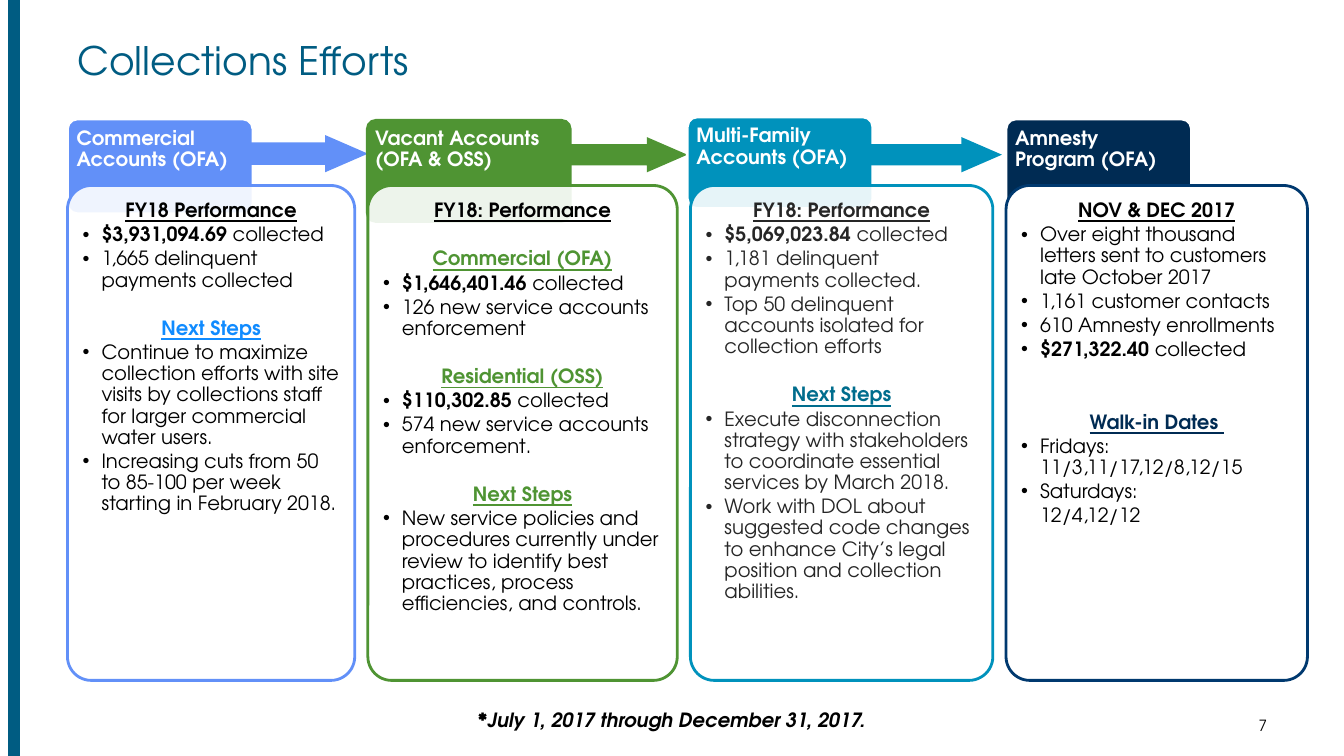
"""Build the Collections Efforts slide."""
from dataclasses import dataclass

from lxml import etree
from pptx import Presentation
from pptx.dml.color import RGBColor
from pptx.enum.shapes import MSO_CONNECTOR, MSO_SHAPE
from pptx.enum.text import MSO_ANCHOR, PP_ALIGN
from pptx.oxml.ns import qn
from pptx.util import Pt

LEFT, CENTER, RIGHT = PP_ALIGN.LEFT, PP_ALIGN.CENTER, PP_ALIGN.RIGHT
TOP, MIDDLE = MSO_ANCHOR.TOP, MSO_ANCHOR.MIDDLE
ROUNDED, ARROW = MSO_SHAPE.ROUNDED_RECTANGLE, MSO_SHAPE.RIGHT_ARROW
STRAIGHT = MSO_CONNECTOR.STRAIGHT
FONT, TEAL, BLACK, WHITE = "TeX Gyre Adventor", "005C82", "000000", "FFFFFF"
CARD_TOP, CARD_HEIGHT = 132.5, 353.5
LINE_GAP = 17.3
HANG = 13.5


def rgb(value):
    return RGBColor.from_string(value)


@dataclass
class Entry:
    text: str
    lead: str = ""
    color: str = BLACK
    heading: bool = False
    bullet: bool = True
    gap: float = 0


def heading(text, color=BLACK, lines=1):
    return Entry(text, color=color, heading=True, bullet=False, gap=lines * LINE_GAP)


class SlideBuilder:
    def __init__(self, slide):
        self.slide = slide

    def style(self, paragraph, size, color=BLACK, bold=False, italic=False, underline=False):
        font = paragraph.font
        font.name, font.size, font.color.rgb = FONT, Pt(size), rgb(color)
        font.bold, font.italic, font.underline = bold, italic, underline

    def shape(self, kind, box, fill, line=None, opacity=100):
        shape = self.slide.shapes.add_shape(kind, *map(Pt, box))
        shape.shadow.inherit = False
        shape.fill.solid()
        shape.fill.fore_color.rgb = rgb(fill)
        if opacity < 100:
            color = shape.fill._xPr.find(".//" + qn("a:srgbClr"))
            etree.SubElement(color, qn("a:alpha")).set("val", str(opacity * 1000))
        if line:
            shape.line.color.rgb = rgb(line)
            shape.line.width = Pt(2)
        else:
            shape.line.fill.background()
        return shape

    def rounded(self, box, radius, inset, fill, line=None, opacity=100):
        shape = self.shape(ROUNDED, box, fill, line, opacity)
        shape.adjustments[0] = radius / min(box[2:])
        frame = shape.text_frame
        frame.word_wrap, frame.vertical_anchor = True, TOP
        margin = Pt(inset - radius * 0.29)
        frame.margin_left = frame.margin_right = frame.margin_top = frame.margin_bottom = margin
        return frame

    def tab(self, box, label, fill, line):
        paragraph = self.rounded(box, 7, 6.5, fill, line).paragraphs[0]
        paragraph.text, paragraph.alignment = label, LEFT
        paragraph.line_spacing = 0.9
        self.style(paragraph, 14, WHITE, bold=True)

    def card(self, left, width, line, opacity, entries):
        box = (left, CARD_TOP, width, CARD_HEIGHT)
        frame = self.rounded(box, 17, 10.8, WHITE, line, opacity)
        for index, entry in enumerate(entries):
            paragraph = frame.add_paragraph() if index else frame.paragraphs[0]
            self.entry(paragraph, entry)

    def entry(self, paragraph, entry):
        paragraph.alignment = CENTER if entry.heading else LEFT
        paragraph.line_spacing = 0.9
        paragraph.space_before, paragraph.space_after = Pt(entry.gap), Pt(2.1)
        properties = paragraph._p.get_or_add_pPr()
        if not entry.heading:
            properties.set("marL", str(Pt(HANG)))
            properties.set("indent", str(Pt(-HANG) if entry.bullet else 0))
        if entry.bullet:
            etree.SubElement(properties, qn("a:buFont")).set("typeface", "Arial")
            etree.SubElement(properties, qn("a:buChar")).set("char", "•")
        if entry.lead:
            amount = paragraph.add_run()
            amount.text = entry.lead
            amount.font.bold = True
        paragraph.add_run().text = entry.text
        self.style(paragraph, 14, entry.color, bold=entry.heading, underline=entry.heading)

    def arrow(self, box, fill):
        arrow = self.shape(ARROW, box, fill)
        arrow.adjustments[0], arrow.adjustments[1] = 0.6, 1.15

    def title(self, box, text):
        title = self.slide.shapes.title
        title.left, title.top, title.width, title.height = map(Pt, box)
        title.text_frame.vertical_anchor = MIDDLE
        paragraph = title.text_frame.paragraphs[0]
        paragraph.text, paragraph.alignment = text, LEFT
        self.style(paragraph, 28, TEAL)

    def text(self, box, text, size, alignment, anchor=TOP, **emphasis):
        frame = self.slide.shapes.add_textbox(*map(Pt, box)).text_frame
        frame.word_wrap, frame.vertical_anchor = True, anchor
        if anchor == MIDDLE:
            frame.margin_top = frame.margin_bottom = 0
        paragraph = frame.paragraphs[0]
        paragraph.text, paragraph.alignment = text, alignment
        self.style(paragraph, size, **emphasis)

    def side_bar(self, x, height, width):
        bar = self.slide.shapes.add_connector(STRAIGHT, Pt(x), 0, Pt(x), Pt(height))
        bar.line.color.rgb, bar.line.width = rgb(TEAL), Pt(width)
        etree.SubElement(bar._element.spPr, qn("a:effectLst"))


GRAY = "262626"
PROGRAMS = [
    dict(
        label="Commercial Accounts (OFA)", fill="6290F8", outline="6290F8", edge=WHITE,
        tab=(48.2, 85, 132.5, 67.7), card=(48.2, 205.2), opacity=90,
        arrow=(175.7, 96.5, 87.1, 26.6),
        entries=[
            heading("FY18 Performance", lines=0),
            Entry("collected", "$3,931,094.69 "),
            Entry("1,665 delinquent payments collected"),
            heading("Next Steps", "108BFF"),
            Entry("Continue to maximize collection efforts with site visits by "
                  "collections staff for larger commercial water users."),
            Entry("Increasing cuts from 50 to 85-100 per week starting in February 2018."),
        ]),
    dict(
        label="Vacant Accounts (OFA & OSS)", fill="4F9433", outline="4F9433", edge=None,
        tab=(261.4, 85, 146.9, 74.2), card=(262.8, 221), opacity=90,
        arrow=(393.1, 97.9, 97.9, 25.2),
        entries=[
            heading("FY18: Performance", lines=0),
            heading("Commercial (OFA)", "4F9433"),
            Entry("collected", "$1,646,401.46 "),
            Entry("126 new service accounts enforcement"),
            heading("Residential (OSS)", "4F9433"),
            Entry("collected", "$110,302.85 "),
            Entry("574 new service accounts enforcement."),
            heading("Next Steps", "4F9433"),
            Entry("New service policies and procedures currently under review to "
                  "identify best practices, process efficiencies, and controls."),
        ]),
    dict(
        label="Multi-Family Accounts (OFA)", fill="0092BC", outline="0092BC", edge=WHITE,
        tab=(491, 83.5, 132.5, 65.5), card=(493.2, 216), opacity=90,
        arrow=(618.5, 97.9, 97.2, 25.2),
        entries=[
            heading("FY18: Performance", GRAY, lines=0),
            Entry("collected", "$5,069,023.84 ", GRAY),
            Entry("1,181 delinquent payments collected.", color=GRAY),
            Entry("Top 50 delinquent accounts isolated for collection efforts", color=GRAY),
            heading("Next Steps", "006D8D"),
            Entry("Execute disconnection strategy with stakeholders to coordinate "
                  "essential services by March 2018.", color=GRAY),
            Entry("Work with DOL about suggested code changes to enhance City’s legal "
                  "position and collection abilities.", color=GRAY),
        ]),
    dict(
        label="Amnesty Program (OFA)", fill="002B53", outline="00396F", edge=WHITE,
        tab=(718.6, 85, 132.5, 76.3), card=(718.6, 215.3), opacity=100, arrow=None,
        entries=[
            heading("NOV & DEC 2017", lines=0),
            Entry("Over eight thousand letters sent to customers late October 2017"),
            Entry("1,161 customer contacts"),
            Entry("610 Amnesty enrollments"),
            Entry("collected", "$271,322.40 "),
            heading("Walk-in Dates ", "002B53", lines=2),
            Entry("Fridays: 11/3,11/17,12/8,12/15"),
            Entry("Saturdays:"),
            Entry("12/4,12/12", bullet=False),
        ]),
]


def main():
    deck = Presentation()
    deck.slide_width, deck.slide_height = Pt(960), Pt(540)
    builder = SlideBuilder(deck.slides.add_slide(deck.slide_layouts[5]))
    builder.side_bar(10, 540, 8)
    builder.title((48.2, 18.7, 815.8, 47.5), "Collections Efforts")
    for program in PROGRAMS:
        builder.tab(program["tab"], program["label"], program["fill"], program["edge"])
        builder.card(*program["card"], program["outline"], program["opacity"], program["entries"])
        if program["arrow"]:
            builder.arrow(program["arrow"], program["fill"])
    builder.text((167.8, 501.8, 624.2, 24.5), "*July 1, 2017 through December 31, 2017.",
                 14, CENTER, bold=True, italic=True)
    builder.text((723.6, 510.5, 188.6, 15.1), "7", 11, RIGHT, MIDDLE)
    deck.save("out.pptx")


if __name__ == "__main__":
    main()
